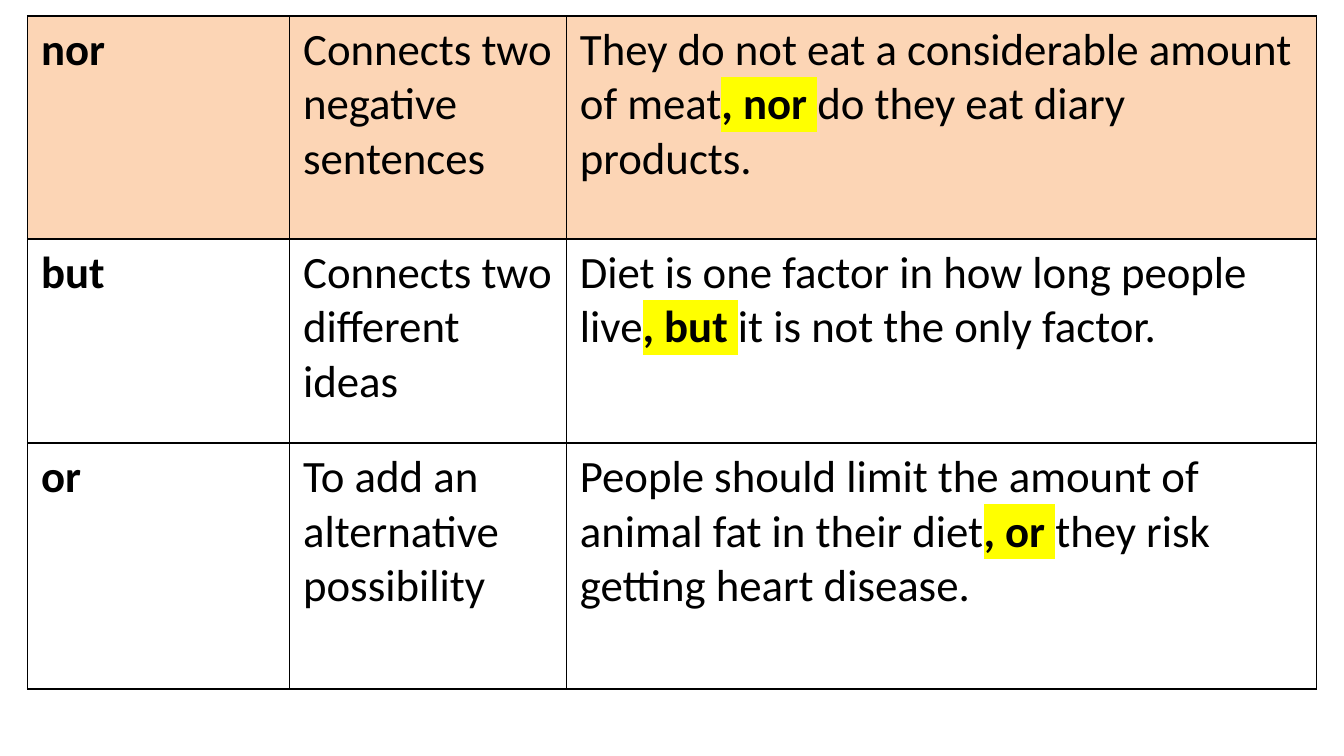
from lxml import etree
from pptx import Presentation
from pptx.dml.color import RGBColor
from pptx.oxml.ns import qn
from pptx.util import Pt

BLACK = RGBColor(0x00, 0x00, 0x00)
PEACH = RGBColor(0xFC, 0xD5, 0xB5)
YELLOW = RGBColor(0xFF, 0xFF, 0x00)

COL_WIDTHS = [140.4, 148.3, 401.8]
ROW_HEIGHTS = [119.5, 109.4, 131.7]

# Conjunction, use, example before and after the conjunction
ROWS = [
    ("nor", "Connects two negative sentences",
     "They do not eat a considerable amount of meat", "do they eat diary products."),
    ("but", "Connects two different ideas",
     "Diet is one factor in how long people live", "it is not the only factor."),
    ("or", "To add an alternative possibility",
     "People should limit the amount of animal fat in their diet",
     "they risk getting heart disease."),
]


def add_run(p, text, bold=False, highlight=None):
    r = p.add_run()
    r.text = text
    r.font.size = Pt(24)
    r.font.bold = bold
    r.font.color.rgb = BLACK
    if highlight is not None:
        mark = etree.SubElement(r.font._element, qn("a:highlight"))
        etree.SubElement(mark, qn("a:srgbClr"), val=str(highlight))
    r.font.name = "Calibri"


def add_borders(cell):
    tc_pr = cell._tc.get_or_add_tcPr()
    for i, side in enumerate(("lnL", "lnR", "lnT", "lnB")):
        ln = etree.Element(qn(f"a:{side}"), w=str(Pt(1)))
        fill = etree.SubElement(ln, qn("a:solidFill"))
        etree.SubElement(fill, qn("a:srgbClr"), val=str(BLACK))
        tc_pr.insert(i, ln)


prs = Presentation()
prs.slide_width, prs.slide_height = Pt(720), Pt(405)
s = prs.slides.add_slide(prs.slide_layouts[6])

# Table grid
table = s.shapes.add_table(3, 3, Pt(14.8), Pt(8.6),
                           Pt(sum(COL_WIDTHS)), Pt(sum(ROW_HEIGHTS))).table
table.first_row = False
table.horz_banding = False
for col, width in zip(table.columns, COL_WIDTHS):
    col.width = Pt(width)
for row, height in zip(table.rows, ROW_HEIGHTS):
    row.height = Pt(height)

# Cell text, fills and borders
for i, (word, use, before, after) in enumerate(ROWS):
    cells = table.rows[i].cells
    word_p, use_p, example_p = [c.text_frame.paragraphs[0] for c in cells]
    add_run(word_p, word, bold=True)
    add_run(use_p, use)
    add_run(example_p, before)
    add_run(example_p, f", {word} ", bold=True, highlight=YELLOW)
    add_run(example_p, after)
    for cell in cells:
        if i == 0:
            cell.fill.solid()
            cell.fill.fore_color.rgb = PEACH
        else:
            cell.fill.background()
        add_borders(cell)

prs.save("out.pptx")
